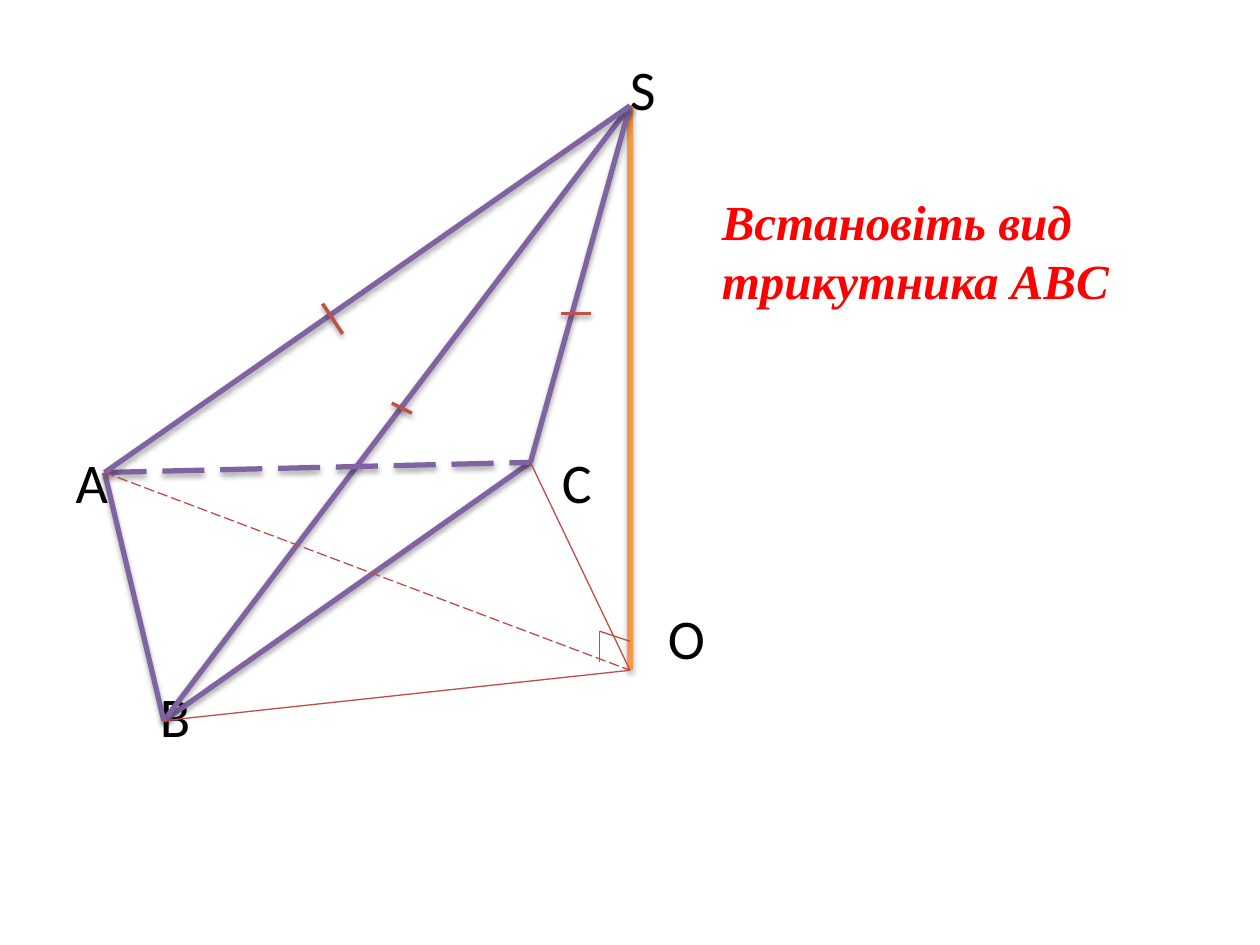
"""Build a slide with a pyramid SABC, its height SO and a question about triangle ABC."""
from lxml import etree
from pptx import Presentation
from pptx.dml.color import RGBColor
from pptx.enum.dml import MSO_LINE
from pptx.enum.shapes import MSO_CONNECTOR
from pptx.oxml.ns import qn
from pptx.util import Inches, Pt

COLORS = {"text": "000000", "question": "FF0000", "height": "F79646",
          "edge": "8064A2", "tick": "C0504D", "thin": "BF4C48"}
POINTS = {"S": (5, 0.84), "A": (0.83, 3.75), "B": (1.3, 5.72), "C": (4.21, 3.67), "O": (5, 5.32)}
LABELS = {"S": (5, 0.43), "A": (0.6, 3.55), "C": (4.46, 3.55), "O": (5.3, 4.79), "B": (1.27, 5.41)}
STYLES = {"height": (3, 35, 23000), "edge": (3, 35, 23000), "tick": (2, 38, 20000), "thin": (0.75, 0, 0)}
SEGMENTS = [("SO", "height", False), ("CB", "edge", False), ("SB", "edge", False),
            ("SC", "edge", False), ("AC", "edge", True), ("AB", "edge", False),
            ("AS", "edge", False), ("AO", "thin", True), ("CO", "thin", False),
            ("BO", "thin", False)]
MARKS = [((2.56, 2.41), (2.72, 2.65), "tick"), ((3.11, 3.2), (3.27, 3.28), "tick"),
         ((4.45, 2.49), (4.69, 2.49), "tick"), ((4.76, 5.25), (4.76, 5.01), "thin"),
         ((4.76, 5.01), (5, 5.09), "thin")]

prs = Presentation()
prs.slide_width, prs.slide_height = Inches(10), Inches(7.5)
s = prs.slides.add_slide(prs.slide_layouts[6])


def add_text(text, left, top, width, height, size, font, color):
    sp = s.shapes.add_textbox(Inches(left), Inches(top), Inches(width), Inches(height))
    tf = sp.text_frame
    tf.word_wrap = True
    tf.text = text
    r = tf.paragraphs[0].runs[0]
    r.font.size, r.font.name = Pt(size), font
    r.font.color.rgb = RGBColor.from_string(COLORS[color])
    return tf


def add_line(start, end, kind, dashed=False):
    width, alpha, dist = STYLES[kind]
    cn = s.shapes.add_connector(MSO_CONNECTOR.STRAIGHT, *map(Inches, start + end))
    cn.line.width = Pt(width)
    cn.line.color.rgb = RGBColor.from_string(COLORS[kind])
    if dashed:
        cn.line.dash_style = MSO_LINE.LONG_DASH
    effects = etree.SubElement(cn._element.spPr, qn("a:effectLst"))
    if alpha:
        shadow = etree.SubElement(effects, qn("a:outerShdw"), blurRad="40000", dist=str(dist),
                                  dir="5400000", rotWithShape="0")
        clr = etree.SubElement(shadow, qn("a:srgbClr"), val="000000")
        etree.SubElement(clr, qn("a:alpha"), val=str(alpha * 1000))


for name, (left, top) in LABELS.items():
    tf = add_text(name, left, top, 0.5, 0.55, 32, "Calibri", "text")
    tf.margin_left = tf.margin_right = tf.margin_top = tf.margin_bottom = 0

for ends, kind, dashed in SEGMENTS:
    add_line(POINTS[ends[0]], POINTS[ends[1]], kind, dashed)

for start, end, kind in MARKS:
    add_line(start, end, kind)

tf = add_text("Встановіть вид трикутника ABC", 5.63, 1.47, 3.62, 1.04, 28,
              "Times New Roman", "question")
font = tf.paragraphs[0].runs[0].font
font.bold = font.italic = True

prs.save("out.pptx")
